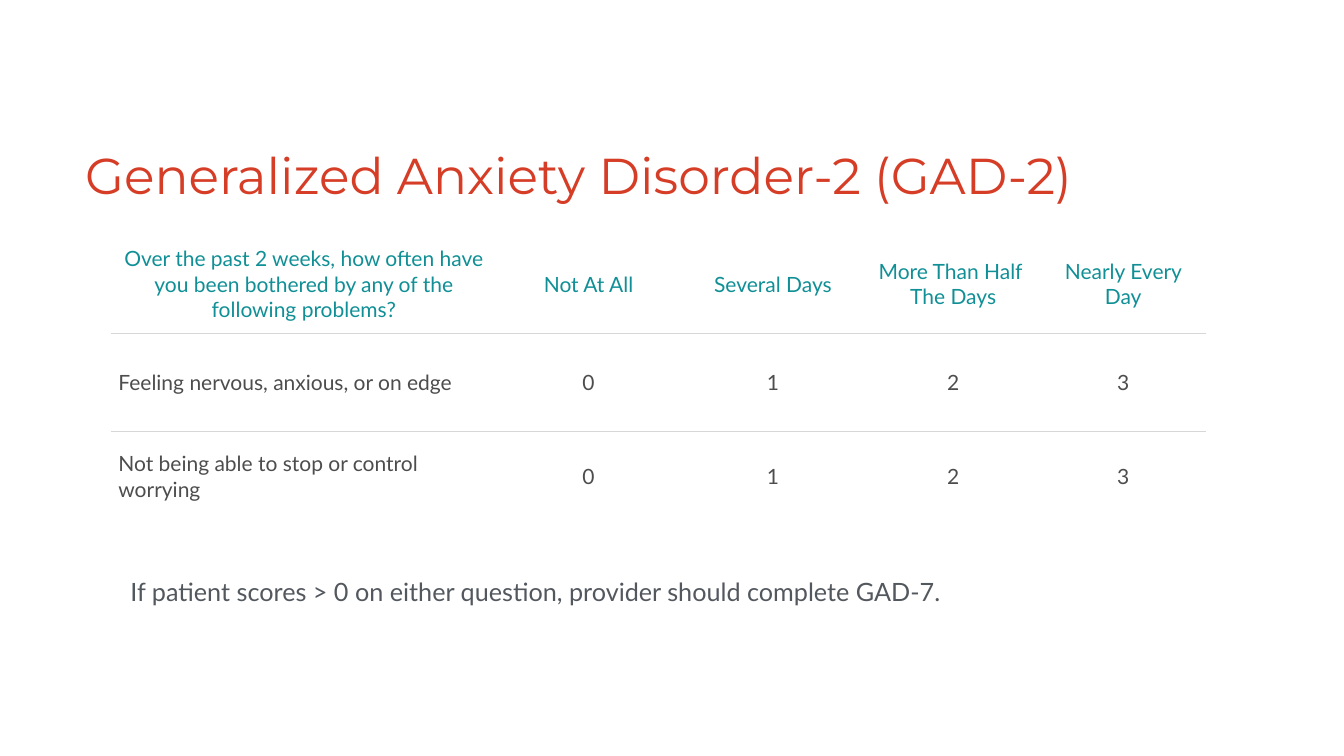
from dataclasses import dataclass

from lxml import etree
from pptx import Presentation
from pptx.dml.color import RGBColor as Color
from pptx.enum.text import MSO_ANCHOR as Anchor, MSO_AUTO_SIZE as AutoSize, PP_ALIGN as Align
from pptx.oxml import parse_xml
from pptx.oxml.ns import nsdecls
from pptx.util import Inches, Pt


@dataclass(frozen=True)
class Theme:
    heading_font: str = "Montserrat"
    body_font: str = "Lato"
    title_size: int = 72
    table_size: int = 30
    note_size: int = 36
    red: str = "D63D26"
    teal: str = "109096"
    dark: str = "4D4D4D"
    slate: str = "53585F"
    rule: str = "D6D7D6"


theme = Theme()


def write(frame, text, font, size, color, align, inset):
    """Put one styled paragraph in a text frame."""
    frame.margin_left = frame.margin_right = Inches(inset)
    frame.margin_top = frame.margin_bottom = Inches(inset)
    para = frame.paragraphs[0]
    para.text = text
    para.alignment = align
    para.font.name = font
    para.font.size = Pt(size)
    para.font.color.rgb = Color.from_string(color)
    return para


def add_rule(cell, side):
    """Draw a thin border on one side of a table cell."""
    cell._tc.get_or_add_tcPr().append(parse_xml(
        f'<a:{side} {nsdecls("a")} w="{Pt(1)}"><a:solidFill>'
        f'<a:srgbClr val="{theme.rule}"/></a:solidFill></a:{side}>'))


deck = Presentation()
deck.slide_width, deck.slide_height = Inches(26.67), Inches(15)
page = deck.slides.add_slide(deck.slide_layouts[6])

# Title
title = page.shapes.add_textbox(Inches(1.67), Inches(2.97), Inches(23.33), Inches(1.26))
title.text_frame.word_wrap = True
title.text_frame.vertical_anchor = Anchor.MIDDLE
para = write(title.text_frame, "Generalized Anxiety Disorder-2 (GAD-2)",
             theme.heading_font, theme.title_size, theme.red, Align.LEFT, 0.02)
para.line_spacing = 0.7

# Questionnaire table
scores = ["0", "1", "2", "3"]
rows = [
    ["Over the past 2 weeks, how often have you been bothered by any of the following problems?",
     "Not At All", "Several Days", "More Than Half \nThe Days", "Nearly Every Day"],
    ["Feeling nervous, anxious, or on edge", *scores],
    ["Not being able to stop or control worrying", *scores],
]
widths = [7.64, 3.66, 3.66, 3.49, 3.26]
heights = [1.95, 1.95, 1.78]
table = page.shapes.add_table(len(rows), len(widths), Inches(2.21), Inches(4.66),
                              Inches(sum(widths)), Inches(sum(heights))).table
table.first_row = table.horz_banding = False
for column, width in zip(table.columns, widths):
    column.width = Inches(width)
for row, height in zip(table.rows, heights):
    row.height = Inches(height)

for r, texts in enumerate(rows):
    for c, text in enumerate(texts):
        cell = table.cell(r, c)
        is_question = r > 0 and c == 0
        write(cell.text_frame, text, theme.body_font, theme.table_size,
              theme.dark if r else theme.teal,
              Align.LEFT if is_question else Align.CENTER, 0.14)
        cell.margin_left = cell.margin_right = Inches(0.14)
        cell.margin_top = cell.margin_bottom = Inches(0.14)
        cell.vertical_anchor = Anchor.MIDDLE
        if r > 0:
            add_rule(cell, "lnT")
        if r < len(rows) - 1:
            add_rule(cell, "lnB")
        cell.fill.background()

# Scoring note
note = page.shapes.add_textbox(Inches(2.47), Inches(11.37), Inches(16.31), Inches(0.72))
note.text_frame.word_wrap = False
note.text_frame.auto_size = AutoSize.SHAPE_TO_FIT_TEXT
note.text_frame.vertical_anchor = Anchor.MIDDLE
write(note.text_frame, "If patient scores > 0 on either question, provider should complete GAD-7.",
      theme.body_font, theme.note_size, theme.slate, Align.CENTER, 0.06)

deck.save("out.pptx")
